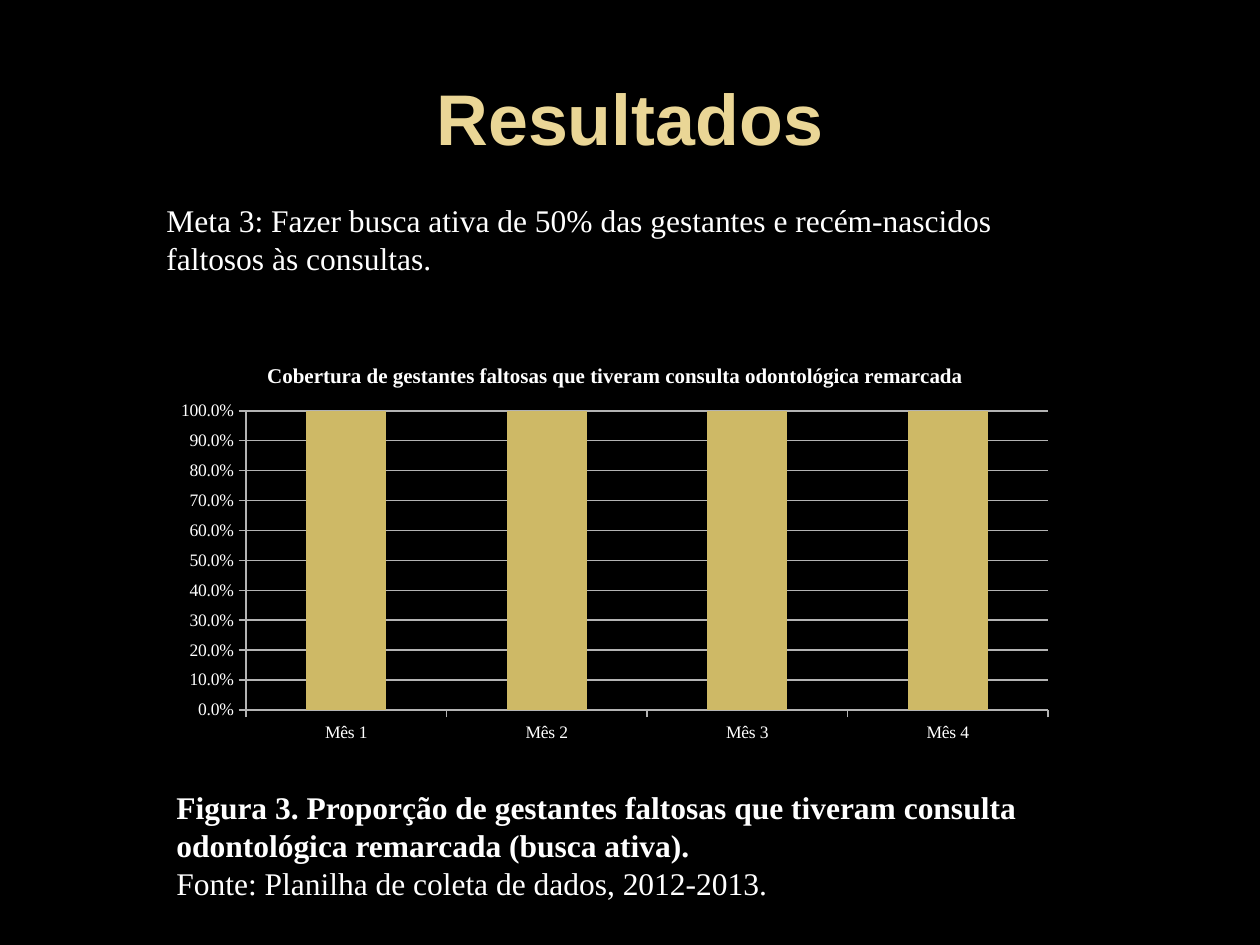
import dataclasses

import pptx
import pptx.chart.data
import pptx.dml.color
import pptx.enum.chart
import pptx.enum.text
import pptx.oxml
import pptx.oxml.ns
import pptx.util

PX = 914400 / 126


@dataclasses.dataclass(frozen=True)
class Theme:
    background: str = "000000"
    title: str = "EAD696"
    text: str = "FFFFFF"
    bar: str = "CEB966"
    grid: str = "B3B3B3"
    title_font: str = "Arial"
    body_font: str = "Times New Roman"
    title_size: int = 41
    body_size: int = 18
    chart_title_size: int = 12
    axis_size: int = 10


theme = Theme()


def box(left, top, width, height):
    """Turn pixel lengths into EMU."""
    return [pptx.util.Emu(round(v * PX)) for v in (left, top, width, height)]


def style(font, name, size, color, bold=False):
    font.name = name
    font.size = pptx.util.Pt(size)
    font.bold = bold
    font.color.rgb = pptx.dml.color.RGBColor.from_string(color)


prs = pptx.Presentation()
prs.slide_width, prs.slide_height = box(0, 0, 1260, 945)[2:]
s = prs.slides.add_slide(prs.slide_layouts[5])
s.background.fill.solid()
s.background.fill.fore_color.rgb = pptx.dml.color.RGBColor.from_string(theme.background)

# Title
title = s.shapes.title
title.left, title.top, title.width, title.height = box(63, 38, 1134, 157)
tf = title.text_frame
tf.vertical_anchor = pptx.enum.text.MSO_ANCHOR.MIDDLE
p = tf.paragraphs[0]
p.alignment = pptx.enum.text.PP_ALIGN.CENTER
r = p.add_run()
r.text = "Resultados"
style(r.font, theme.title_font, theme.title_size, theme.title, True)

# Chart
heading = "Cobertura de gestantes faltosas que tiveram consulta odontológica remarcada"
data = pptx.chart.data.CategoryChartData(number_format="0.0%")
data.categories = [f"Mês {month}" for month in range(1, 5)]
data.add_series(heading, [1] * 4)
chart = s.shapes.add_chart(
    pptx.enum.chart.XL_CHART_TYPE.COLUMN_CLUSTERED, *box(164, 344, 903, 407), data
).chart
style(chart.font, theme.body_font, theme.axis_size, theme.text)
chart.has_legend = False
chart.has_title = True
r = chart.chart_title.text_frame.paragraphs[0].add_run()
r.text = heading
style(r.font, theme.body_font, theme.chart_title_size, theme.text, True)

plot = chart.plots[0]
plot.gap_width = 150
plot.vary_by_categories = False
fill = plot.series[0].format.fill
fill.solid()
fill.fore_color.rgb = pptx.dml.color.RGBColor.from_string(theme.bar)

values = chart.value_axis
values.minimum_scale, values.maximum_scale, values.major_unit = 0, 1, 0.1
values.has_major_gridlines = True
values.tick_labels.number_format = "0.0%"
values.tick_labels.number_format_is_linked = False
for axis in (chart.category_axis, values):
    axis.major_tick_mark = pptx.enum.chart.XL_TICK_MARK.OUTSIDE
for part in (chart.category_axis, values, values.major_gridlines):
    part.format.line.width = pptx.util.Pt(0.75)
    part.format.line.color.rgb = pptx.dml.color.RGBColor.from_string(theme.grid)

plot_area = chart.element.find(".//" + pptx.oxml.ns.qn("c:plotArea"))
for old in plot_area.findall(pptx.oxml.ns.qn("c:layout")):
    plot_area.remove(old)
plot_area.insert(0, pptx.oxml.parse_xml(
    f'<c:layout {pptx.oxml.ns.nsdecls("c")}><c:manualLayout>'
    '<c:layoutTarget val="inner"/><c:xMode val="edge"/><c:yMode val="edge"/>'
    f'<c:x val="{82 / 903:.4f}"/><c:y val="{67 / 407:.4f}"/>'
    f'<c:w val="{802 / 903:.4f}"/><c:h val="{299 / 407:.4f}"/>'
    '</c:manualLayout></c:layout>'
))

# Goal above the chart, caption and source below it
goal = "Meta 3: Fazer busca ativa de 50% das gestantes e recém-nascidos faltosos às consultas."
caption = (
    "Figura 3. Proporção de gestantes faltosas que tiveram consulta "
    "odontológica remarcada (busca ativa)."
)
source = "Fonte: Planilha de coleta de dados, 2012-2013."
texts = [
    ((154, 195, 903, 89), [(goal, False)]),
    ((164, 782, 883, 127), [(caption, True), (source, False)]),
]
for place, paragraphs in texts:
    tf = s.shapes.add_textbox(*box(*place)).text_frame
    tf.word_wrap = True
    tf.auto_size = pptx.enum.text.MSO_AUTO_SIZE.SHAPE_TO_FIT_TEXT
    for i, (text, bold) in enumerate(paragraphs):
        p = tf.add_paragraph() if i else tf.paragraphs[0]
        r = p.add_run()
        r.text = text
        style(r.font, theme.body_font, theme.body_size, theme.text, bold)

prs.save("out.pptx")
